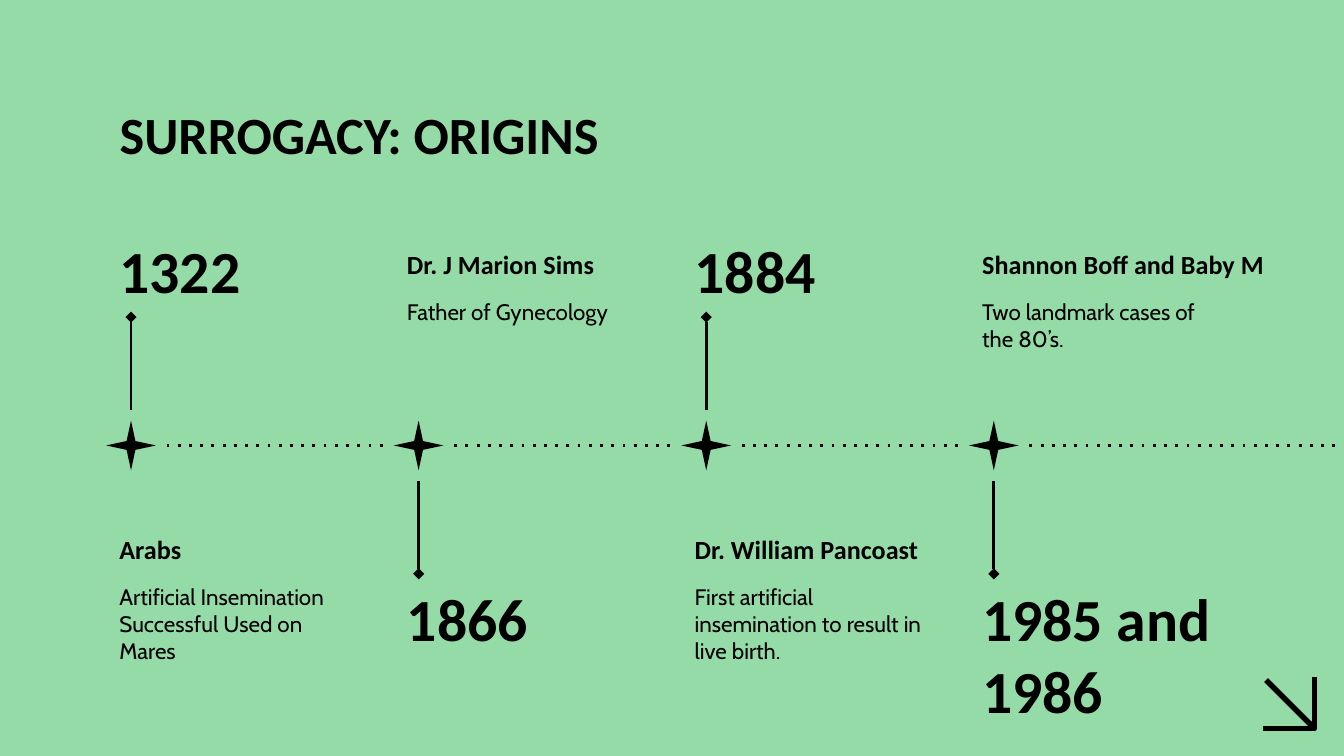
"""Builds the timeline slide on the origins of surrogacy."""
from dataclasses import dataclass
from typing import Any

from lxml.etree import SubElement as Sub
from pptx import Presentation as Deck
from pptx.dml.color import RGBColor
from pptx.enum.shapes import MSO_CONNECTOR as Link, MSO_SHAPE as Kind
from pptx.enum.text import MSO_ANCHOR as Anchor, MSO_AUTO_SIZE as Fit, PP_ALIGN as Align
from pptx.oxml.ns import qn
from pptx.util import Inches, Pt

INK = RGBColor(0x00, 0x00, 0x00)
MINT = RGBColor(0x95, 0xDB, 0xA7)

WIDE, HIGH = 10, 5.625
LEFT, STEP = 0.79, 2.14
AXIS, STAR = 3.315, 0.37
STEM_IN, STEM_OUT = 0.265, 0.955
DOT_IN, DOT_LEN = 0.45, 1.61

FRAME = {"margin_left": Inches(0.1), "margin_right": Inches(0.1), "margin_top": 0,
         "margin_bottom": 0, "word_wrap": True, "auto_size": Fit.NONE,
         "vertical_anchor": Anchor.TOP}
HEAD = {"name": "Calibri", "size": Pt(28), "bold": True}
YEAR = {"name": "Calibri", "size": Pt(32), "bold": True}
NAME = {"name": "Calibri", "size": Pt(14), "bold": True}
NOTE = {"name": "Cabin", "size": Pt(12), "bold": False}


@dataclass(frozen=True)
class Row:
    year: float
    name: float
    note: float


@dataclass(frozen=True)
class Event:
    year: str
    name: str
    note: str
    span: float = 2


TOP = Row(1.74, 1.85, 2.22)
LOW = Row(4.33, 3.97, 4.34)

EVENTS = (
    Event("1322", "Arabs", "Artificial Insemination Successful Used on Mares"),
    Event("1866", "Dr. J Marion Sims", "Father of Gynecology"),
    Event("1884", "Dr. William Pancoast",
          "First artificial insemination to result in live birth."),
    Event("1985 and 1986", "Shannon Boff and Baby M",
          "Two landmark cases of the 80’s.", 2.41),
)


def apply(item: Any, form: dict[str, Any]) -> None:
    """Set each attribute that the format names."""
    for key, val in form.items():
        setattr(item, key, val)


def write(box: Any, text: str, form: dict[str, Any], after: int = 0) -> None:
    """Fill a box with one formatted paragraph."""
    frame = box.text_frame
    frame.text = text
    apply(frame, FRAME)
    para = frame.paragraphs[0]
    apply(para, {"alignment": Align.LEFT, "space_after": Pt(after)})
    font = para.runs[0].font
    apply(font, form)
    font.color.rgb = INK


def label(tree: Any, x: float, y: float, wide: float, high: float,
          text: str, form: dict[str, Any]) -> None:
    """Add a text box."""
    box = tree.add_textbox(*map(Inches, (x, y, wide, high)))
    write(box, text, form, 12)


def stroke(item: Any, width: float) -> None:
    """Give a shape or connector an ink line."""
    item.line.color.rgb = INK
    item.line.width = Pt(width)


def line(tree: Any, x1: float, y1: float, x2: float, y2: float,
         width: float = 1.5, tag: str = "", **attrs: str) -> None:
    """Add a straight line, with an optional dash or end mark."""
    link = tree.add_connector(Link.STRAIGHT, *map(Inches, (x1, y1, x2, y2)))
    stroke(link, width)
    Sub(link._element.spPr, qn("a:effectLst"))
    if tag:
        Sub(link.line._get_or_add_ln(), qn(tag), attrs)


def star(tree: Any, x: float) -> None:
    """Add a four-point star on the axis."""
    mark = tree.add_shape(Kind.STAR_4_POINT,
                          *map(Inches, (x, AXIS - STAR / 2, STAR, STAR)))
    mark.adjustments[0] = 0.125
    mark.shadow.inherit = False
    mark.fill.solid()
    mark.fill.fore_color.rgb = INK
    mark.line.fill.background()


def event(tree: Any, col: int, item: Event) -> None:
    """Draw one column of the timeline, with the year above or below by turns."""
    x = LEFT + STEP * col
    high = col % 2 == 0
    side, other, sign = (TOP, LOW, -1) if high else (LOW, TOP, 1)
    label(tree, x, side.year, 2, 0.53, item.year, YEAR)
    label(tree, x, other.name, item.span, 0.36, item.name, NAME)
    label(tree, x, other.note, 2, 0.63, item.note, NOTE)
    star(tree, x)
    mid = x + STAR / 2
    line(tree, mid, AXIS + sign * STEM_IN, mid, AXIS + sign * STEM_OUT,
         tag="a:tailEnd", type="diamond")
    end = WIDE if col == len(EVENTS) - 1 else x + DOT_IN + DOT_LEN
    line(tree, x + DOT_IN, AXIS, end, AXIS, tag="a:prstDash", val="dot")


def arrow(tree: Any, x: float, y: float, size: float) -> None:
    """Draw the corner arrow with its tip at the given point."""
    pen = tree.build_freeform(Inches(x), Inches(y - size))
    pen.add_line_segments([(Inches(x), Inches(y)), (Inches(x - size), Inches(y))],
                          close=False)
    bend = pen.convert_to_shape()
    bend.shadow.inherit = False
    bend.fill.background()
    stroke(bend, 3)
    line(tree, x, y, x - 0.36, y - 0.36, 3)


def main() -> None:
    """Build and save the slide."""
    deck = Deck()
    apply(deck, {"slide_width": Inches(WIDE), "slide_height": Inches(HIGH)})
    slide = deck.slides.add_slide(deck.slide_layouts[5])
    back = slide.background.fill
    back.solid()
    back.fore_color.rgb = MINT
    tree = slide.shapes
    apply(tree.title, {"left": Inches(LEFT), "top": Inches(0.76),
                       "width": Inches(8.43), "height": Inches(0.47)})
    write(tree.title, "SURROGACY: ORIGINS", HEAD)
    arrow(tree, 9.78, 5.42, 0.38)
    for col, item in enumerate(EVENTS):
        event(tree, col, item)
    deck.save("out.pptx")


if __name__ == "__main__":
    main()
